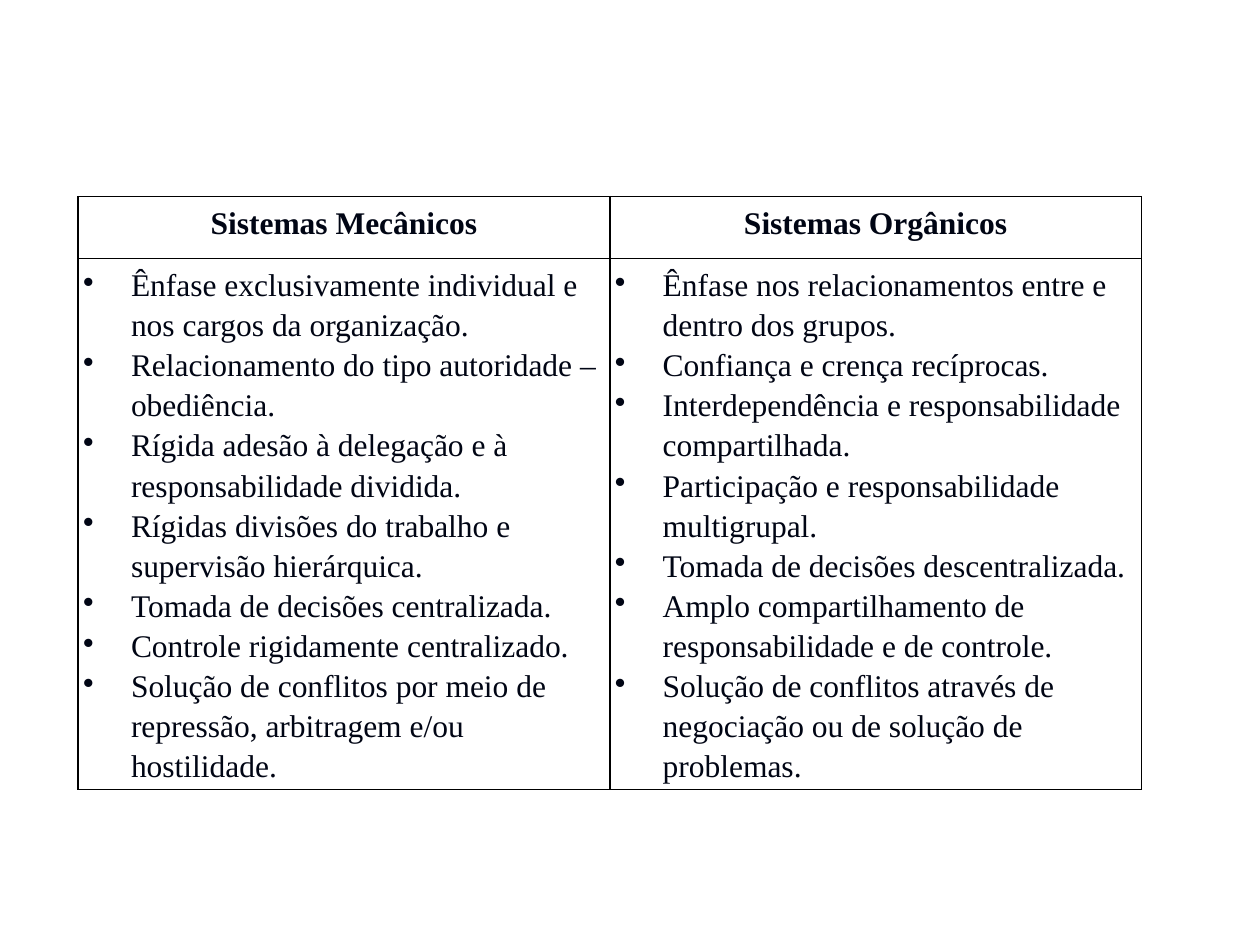
from pptx import Presentation
from pptx.dml.color import RGBColor
from pptx.enum.text import PP_ALIGN
from pptx.oxml.ns import qn
from pptx.util import Inches, Pt
from lxml.etree import SubElement

INK = RGBColor(0x00, 0x05, 0x14)
BORDER = RGBColor(0x00, 0x00, 0x00)
WHITE = RGBColor(0xFF, 0xFF, 0xFF)
FONT = "Times New Roman"

LEFT, TOP = 0.62, 1.56
COLUMN_WIDTH = 4.22
ROW_HEIGHTS = (0.49, 4.04)
CELL_MARGIN = 0.04
BULLET_INDENT = 0.38

SYSTEMS = {
    "Sistemas Mecânicos": [
        "Ênfase exclusivamente individual e nos cargos da organização.",
        "Relacionamento do tipo autoridade – obediência.",
        "Rígida adesão à delegação e à responsabilidade dividida.",
        "Rígidas divisões do trabalho e supervisão hierárquica.",
        "Tomada de decisões centralizada.",
        "Controle rigidamente centralizado.",
        "Solução de conflitos por meio de repressão, arbitragem e/ou hostilidade.",
    ],
    "Sistemas Orgânicos": [
        "Ênfase nos relacionamentos entre e dentro dos grupos.",
        "Confiança e crença recíprocas.",
        "Interdependência e responsabilidade compartilhada.",
        "Participação e responsabilidade multigrupal.",
        "Tomada de decisões descentralizada.",
        "Amplo compartilhamento de responsabilidade e de controle.",
        "Solução de conflitos através de negociação ou de solução de problemas.",
    ],
}


def add_bullet(para):
    """Give a paragraph a hanging bullet."""
    properties = para._p.get_or_add_pPr()
    properties.set("marL", str(Inches(BULLET_INDENT)))
    properties.set("indent", str(-Inches(BULLET_INDENT)))
    SubElement(properties, qn("a:buChar"), char="•")


def write(para, text, *, bold=False, align=PP_ALIGN.LEFT, bullet=False, space_after=0):
    """Put formatted text into a paragraph."""
    if bullet:
        add_bullet(para)
    para.alignment = align
    para.line_spacing = 1.15
    para.space_after = Pt(space_after)
    span = para.add_run()
    span.text = text
    span.font.name = FONT
    span.font.size = Pt(18)
    span.font.bold = bold
    span.font.color.rgb = INK


def style_cell(cell):
    """Set margins, thin borders and a plain fill."""
    cell.margin_left = cell.margin_right = Inches(CELL_MARGIN)
    cell.margin_top = cell.margin_bottom = Inches(CELL_MARGIN)
    properties = cell._tc.get_or_add_tcPr()
    for side in ("lnL", "lnR", "lnT", "lnB"):
        line = SubElement(properties, qn(f"a:{side}"), w=str(Pt(1)))
        fill = SubElement(line, qn("a:solidFill"))
        SubElement(fill, qn("a:srgbClr"), val=str(BORDER))
    cell.fill.solid()
    cell.fill.fore_color.rgb = WHITE


def add_comparison(page, systems):
    """Add a table with one column per system: its name above its traits."""
    frame = page.shapes.add_table(
        len(ROW_HEIGHTS), len(systems), Inches(LEFT), Inches(TOP),
        Inches(COLUMN_WIDTH * len(systems)), Inches(sum(ROW_HEIGHTS)))
    table = frame.table
    table.horz_banding = False
    for row, height in zip(table.rows, ROW_HEIGHTS):
        row.height = Inches(height)
    for cell in table.iter_cells():
        style_cell(cell)

    for column, (name, traits) in enumerate(systems.items()):
        table.columns[column].width = Inches(COLUMN_WIDTH)
        # Heading
        heading = table.cell(0, column).text_frame
        write(heading.paragraphs[0], name, bold=True,
              align=PP_ALIGN.CENTER, space_after=10)
        # Traits
        body = table.cell(1, column).text_frame
        for index, trait in enumerate(traits):
            para = body.add_paragraph() if index else body.paragraphs[0]
            write(para, trait, bullet=True)


def main():
    deck = Presentation()
    deck.slide_width, deck.slide_height = Inches(10), Inches(7.5)
    page = deck.slides.add_slide(deck.slide_layouts[6])
    add_comparison(page, SYSTEMS)
    deck.save("out.pptx")


if __name__ == "__main__":
    main()
